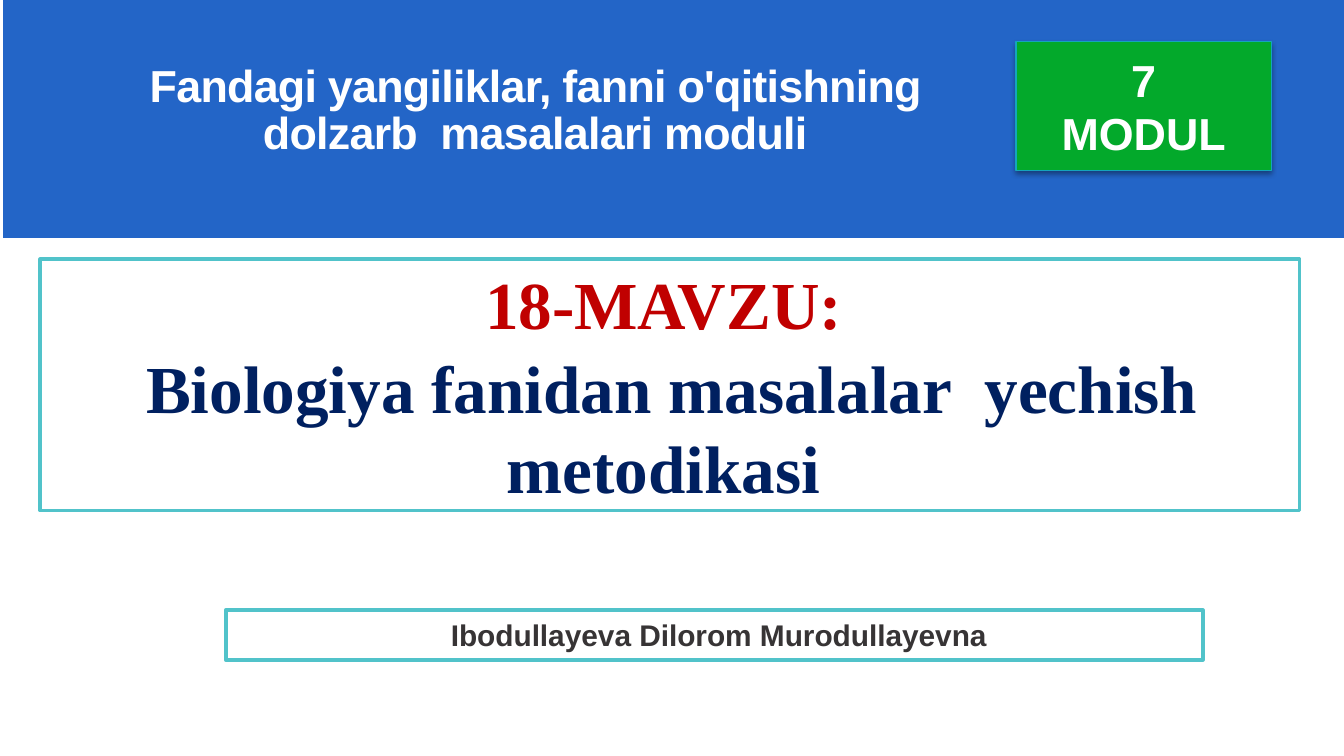
"""Build the title slide of a biology teaching module."""
from lxml import etree
from pptx import Presentation
from pptx.dml.color import RGBColor
from pptx.enum.shapes import MSO_SHAPE
from pptx.enum.text import MSO_ANCHOR as ANCHOR, MSO_AUTO_SIZE as FIT, PP_ALIGN as ALIGN
from pptx.oxml.ns import qn
from pptx.util import Inches, Pt

COLORS = {
    "band": "2365C7",
    "white": "FFFFFF",
    "frame": "51C3CA",
    "green": "03A92B",
    "green_edge": "15A4BD",
    "red": "C00000",
    "navy": "002060",
    "author": "373435",
    "shadow": "000000",
}


def rgb(name):
    return RGBColor.from_string(COLORS[name])


def add_band(s, left, right, bottom):
    corners = [(right, 0), (left, 0), (left, bottom), (right, bottom)]
    points = [(Inches(x), Inches(y)) for x, y in corners]
    builder = s.shapes.build_freeform(*points[0])
    builder.add_line_segments(points[1:], close=True)
    sp = builder.convert_to_shape()
    sp.shadow.inherit = False
    sp.fill.solid()
    sp.fill.fore_color.rgb = rgb("band")
    sp.line.fill.background()
    return sp


def add_box(s, at, fill, line, width):
    sp = s.shapes.add_shape(MSO_SHAPE.RECTANGLE, *[Inches(v) for v in at])
    sp.shadow.inherit = False
    sp.fill.solid()
    sp.fill.fore_color.rgb = rgb(fill)
    sp.line.color.rgb = rgb(line)
    sp.line.width = Pt(width)
    return sp


def set_text(sp, lines, size, colors, font="Arial", anchor=ANCHOR.TOP,
             insets=(0.1, 0.05, 0.1, 0.05), indent=0, before=0, spacing=None, grow=True):
    tf = sp.text_frame
    tf.text = "\n".join(lines)
    tf.word_wrap = True
    tf.auto_size = FIT.SHAPE_TO_FIT_TEXT if grow else FIT.NONE
    tf.vertical_anchor = anchor
    tf.margin_left, tf.margin_top, tf.margin_right, tf.margin_bottom = [Inches(v) for v in insets]
    for p, color in zip(tf.paragraphs, colors):
        p.alignment = ALIGN.CENTER
        p.space_before = Pt(before)
        if spacing:
            p.line_spacing = spacing
        pPr = p._p.get_or_add_pPr()
        pPr.set("marL", str(Inches(indent)))
        pPr.set("indent", "0")
        for r in p.runs:
            r.font.name = font
            r.font.size = Pt(size)
            r.font.bold = True
            r.font.color.rgb = rgb(color)


def add_shadow(sp):
    effects = sp._element.spPr.find(qn("a:effectLst"))
    shadow = etree.SubElement(effects, qn("a:outerShdw"), blurRad=str(Pt(3.1)),
                              dist=str(Pt(1.6)), dir="5400000", rotWithShape="0")
    color = etree.SubElement(shadow, qn("a:srgbClr"), val=COLORS["shadow"])
    etree.SubElement(color, qn("a:alpha"), val="38000")


def set_title(s, text):
    sp = s.shapes.title
    sp.left, sp.top, sp.width, sp.height = [Inches(v) for v in (0.86, 0.46, 6.33, 0.72)]
    set_text(sp, [text], 24, ["white"], anchor=ANCHOR.MIDDLE,
             insets=(0, 0.03, 0, 0), spacing=0.86)
    for r in sp.text_frame.paragraphs[0].runs:
        r.font._element.set("spc", "-40")
    return sp


def main():
    prs = Presentation()
    prs.slide_width = Inches(10)
    prs.slide_height = prs.slide_width * 9 // 16
    s = prs.slides.add_slide(prs.slide_layouts[5])

    band = add_band(s, 0.02, 10, 1.77)
    title = set_title(s, "Fandagi yangiliklar, fanni o'qitishning  dolzarb  masalalari moduli ")
    title._element.addprevious(band._element)

    topic = add_box(s, (0.3, 1.93, 9.37, 1.87), "white", "frame", 2)
    set_text(topic, ["18-MAVZU: ", "Biologiya fanidan masalalar  yechish metodikasi "], 36,
             ["red", "navy"], font="Times New Roman", insets=(0, 0.02, 0, 0),
             indent=0.03, before=1.8)

    badge = add_box(s, (7.56, 0.31, 1.9, 0.96), "green", "green_edge", 0.75)
    set_text(badge, ["7", "MODUL"], 24, ["white"] * 2, anchor=ANCHOR.MIDDLE, grow=False)
    add_shadow(badge)

    author = add_box(s, (1.68, 4.54, 7.27, 0.37), "white", "frame", 2)
    set_text(author, ["Ibodullayeva Dilorom Murodullayevna"], 16, ["author"], indent=0.07)

    prs.save("out.pptx")


if __name__ == "__main__":
    main()
